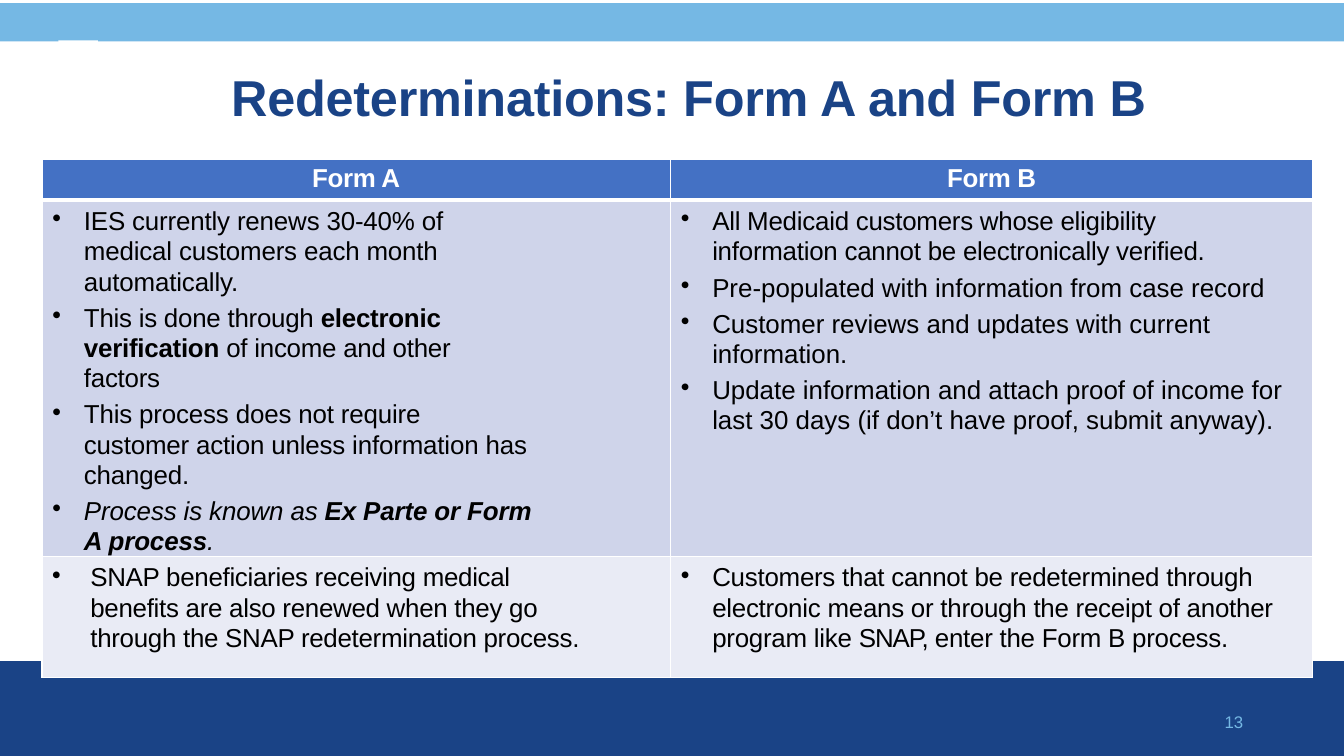
from lxml.etree import SubElement
from pptx import Presentation
from pptx.dml.color import RGBColor
from pptx.enum.shapes import MSO_SHAPE
from pptx.enum.text import MSO_ANCHOR, PP_ALIGN
from pptx.oxml.ns import qn
from pptx.util import Inches, Pt

UNIT = Inches(1 / 12)
NAVY, SKY, WHITE = "1A4386", "75B8E4", "FFFFFF"
HEADER, LILAC, PALE = "4471C4", "CFD4EA", "E9EBF5"
BULLET = {"size": 18.5, "color": "000000", "line": 21.6, "bullet": True, "left": 5}
FORM_A = [
    (["IES currently renews 30-40% of medical customers each month automatically."],
     {"right": 21.6, "spacing": -0.12}),
    (["This is done through ", ("electronic verification", {"bold": True}),
      " of income and other factors"], {"right": 21.6, "spacing": -0.17}),
    (["This process does not require customer action unless information has changed."],
     {"right": 16.7, "spacing": -0.1}),
    (["Process is known as ", ("Ex Parte or Form A process", {"bold": True}), "."],
     {"right": 15, "italic": True, "spacing": -0.08}),
]
FORM_B = [
    (["All Medicaid customers whose eligibility information cannot be electronically verified."],
     {"right": 3.4, "spacing": -0.17}),
    (["Pre-populated with information from case record"], {}),
    (["Customer reviews and updates with current information."], {"right": 3.4}),
    (["Update information and attach proof of income for last 30 days "
      "(if don’t have proof, submit anyway)."], {}),
]
SNAP_A = [
    (["SNAP beneficiaries receiving medical benefits are also renewed when they go "
      "through the SNAP redetermination process."],
     {"right": 9.2, "left": 5.76, "hanging": 4.56, "spacing": -0.2}),
]
SNAP_B = [
    (["Customers that cannot be redetermined through electronic means or through the "
      "receipt of another program like ", ("SNAP, ", {"spacing": -0.8}),
      "enter the Form B process."], {"right": 3.4, "spacing": -0.18}),
]


def units(count):
    """Convert a count of grid units to a length; the slide is 160 by 90 units."""
    return int(count * UNIT)


def rgb(color):
    """Turn a hex string into a colour."""
    return RGBColor.from_string(color)


def add_bullet(properties, left, hanging, right):
    """Give a paragraph a hanging bullet and a right indent."""
    properties.set("marR", str(units(right)))
    properties.set("indent", str(-units(hanging)))
    SubElement(properties, qn("a:buChar")).set("char", "•")
    tabs = SubElement(properties, qn("a:tabLst"))
    tab = SubElement(tabs, qn("a:tab"))
    tab.set("pos", str(units(left)))
    tab.set("algn", "l")


def add_run(paragraph, text, size, color, bold=False, italic=False, spacing=0):
    """Add one formatted run of text."""
    run = paragraph.add_run()
    run.text = text
    font = run.font
    font.name, font.size, font.color.rgb = "Arial", Pt(size), rgb(color)
    font.bold, font.italic = bold, italic
    run._r.get_or_add_rPr().set("spc", str(round(spacing * 100)))


def write(paragraph, parts, align=PP_ALIGN.LEFT, left=0, right=0, hanging=3.75,
          before=0, line=None, bullet=False, **font):
    """Fill a paragraph with plain strings and (string, format) pairs."""
    properties = paragraph._p.get_or_add_pPr()
    properties.set("marL", str(units(left)))
    if bullet:
        add_bullet(properties, left, hanging, right)
    paragraph.alignment = align
    paragraph.space_before = Pt(before)
    if line:
        paragraph.line_spacing = Pt(line)
    for part in parts:
        text, changes = (part, {}) if isinstance(part, str) else part
        add_run(paragraph, text, **{**font, **changes})


def set_insets(frame, top=0):
    """Remove the insets of a text frame or cell, except the top one."""
    frame.margin_left = frame.margin_right = frame.margin_bottom = 0
    frame.margin_top = units(top)
    frame.vertical_anchor = MSO_ANCHOR.TOP


def add_block(slide, left, top, width, height, color):
    """Draw a plain filled rectangle."""
    block = slide.shapes.add_shape(
        MSO_SHAPE.RECTANGLE, units(left), units(top), units(width), units(height))
    block.shadow.inherit = False
    block.fill.solid()
    block.fill.fore_color.rgb = rgb(color)
    block.line.fill.background()


def add_title(slide, text):
    """Place and format the title placeholder."""
    title = slide.shapes.title
    title.left, title.top, title.width, title.height = map(units, (6, 2, 149, 13.2))
    set_insets(title.text_frame, 5.9)
    write(title.text_frame.paragraphs[0], [text], align=PP_ALIGN.CENTER, left=3,
          size=36, color=NAVY, bold=True, spacing=-0.17)


def add_page_number(slide, number):
    """Write the page number on the bottom band."""
    box = slide.shapes.add_textbox(units(145.3), units(84.7), units(3.3), units(2.5))
    box.text_frame.word_wrap = True
    set_insets(box.text_frame)
    write(box.text_frame.paragraphs[0], [number], left=0.5, line=14.3,
          size=12, color=SKY, spacing=-0.2)


def style_cell(cell, color, top_inset, top_line=1, bottom_line=1):
    """Set the fill, white borders and insets of a cell."""
    set_insets(cell, top_inset)
    properties = cell._tc.get_or_add_tcPr()
    widths = {"a:lnL": 1, "a:lnR": 1, "a:lnT": top_line, "a:lnB": bottom_line}
    for tag, width in widths.items():
        border = SubElement(properties, qn(tag))
        border.set("w", str(Pt(width)))
        fill = SubElement(border, qn("a:solidFill"))
        SubElement(fill, qn("a:srgbClr")).set("val", WHITE)
    cell.fill.solid()
    cell.fill.fore_color.rgb = rgb(color)


def fill_bullets(cell, items):
    """Write bulleted paragraphs into a cell."""
    for index, (parts, changes) in enumerate(items):
        paragraph = cell.text_frame.add_paragraph() if index else cell.text_frame.paragraphs[0]
        write(paragraph, parts, before=4.2 if index else 0, **{**BULLET, **changes})


def add_forms_table(slide):
    """Build the comparison of the two forms."""
    table = slide.shapes.add_table(
        3, 2, units(5), units(19), units(151.3), units(45.7)).table
    table.horz_banding = False
    for column, width in zip(table.columns, (74.8, 76.5)):
        column.width = units(width)
    for row, height in zip(table.rows, (4.8, 26.5, 14.4)):
        row.height = units(height)
    for index, heading in enumerate(("Form A", "Form B")):
        cell = table.cell(0, index)
        style_cell(cell, HEADER, 0.5, bottom_line=3)
        write(cell.text_frame.paragraphs[0], [heading], align=PP_ALIGN.CENTER,
              size=18.5, color=WHITE, bold=True, spacing=-0.25)
    body = ((LILAC, 3, (FORM_A, FORM_B)), (PALE, 1, (SNAP_A, SNAP_B)))
    for row, (color, top_line, contents) in enumerate(body, 1):
        for column, items in enumerate(contents):
            style_cell(table.cell(row, column), color, 0.72, top_line)
            fill_bullets(table.cell(row, column), items)


def main():
    """Build and save the slide."""
    presentation = Presentation()
    presentation.slide_width, presentation.slide_height = units(160), units(90)
    slide = presentation.slides.add_slide(presentation.slide_layouts[5])
    add_block(slide, 0, 78.72, 160, 11.28, NAVY)
    add_block(slide, 0, 0.36, 160, 4.56, SKY)
    add_block(slide, 6.96, 4.8, 4.7, 4.92, WHITE)
    add_title(slide, "Redeterminations: Form A and Form B")
    add_page_number(slide, "13")
    add_forms_table(slide)
    presentation.save("out.pptx")


if __name__ == "__main__":
    main()
